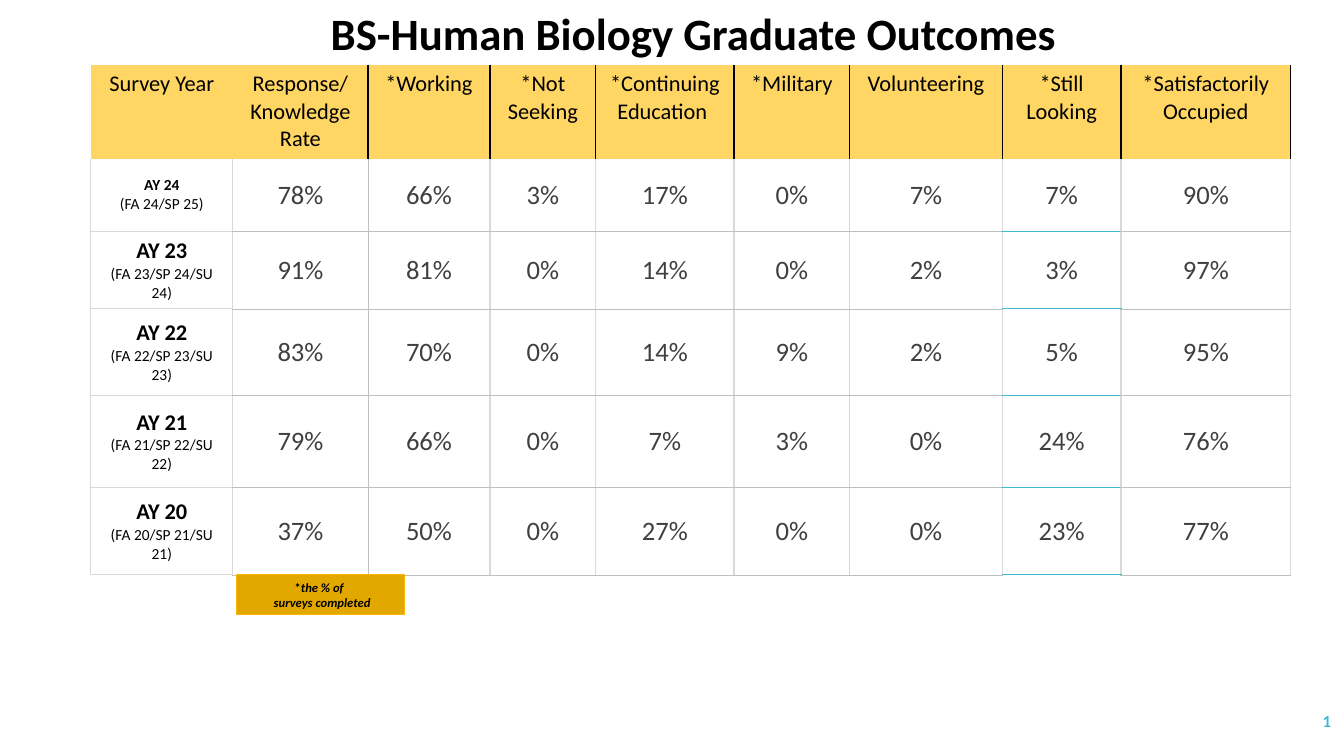
from collections import namedtuple

from lxml.etree import SubElement
from pptx import Presentation
from pptx.dml.color import RGBColor
from pptx.enum.shapes import MSO_SHAPE
from pptx.enum.text import MSO_ANCHOR, MSO_AUTO_SIZE, PP_ALIGN
from pptx.oxml.ns import qn
from pptx.util import Inches, Pt

BLACK = RGBColor(0x00, 0x00, 0x00)
WHITE = RGBColor(0xFF, 0xFF, 0xFF)
CHARCOAL = RGBColor(0x40, 0x40, 0x40)
GOLD = RGBColor(0xFF, 0xD6, 0x63)
DARK_GOLD = RGBColor(0xE3, 0xA8, 0x00)
GOLD_LINE = RGBColor(0xFA, 0xB9, 0x00)
TEAL = RGBColor(0x40, 0xBA, 0xD2)
PALE_GREY = RGBColor(0xD9, 0xD9, 0xD9)
MID_GREY = RGBColor(0xBF, 0xBF, 0xBF)

FONT = "Calibri"
NO_STYLE = "{2D5ABB26-0587-4C30-8999-92F81FD0307C}"
STILL_LOOKING = 7

Box = namedtuple("Box", "left top width height")

COLUMN_WIDTHS = [1.41, 1.34, 1.21, 1.05, 1.37, 1.15, 1.51, 1.18, 1.68]
ROW_HEIGHTS = [0.91, 0.72, 0.72, 0.86, 0.91, 0.87]
HEADINGS = [
    ["Survey Year"], ["Response/", "Knowledge", "Rate"], ["*Working"],
    ["*Not", "Seeking"], ["*Continuing Education "], ["*Military"],
    ["Volunteering"], ["*Still Looking"], ["*Satisfactorily", "Occupied"],
]
OUTCOMES = [
    ("AY 24", 11, "(FA 24/SP 25)", [78, 66, 3, 17, 0, 7, 7, 90]),
    ("AY 23", 16, "(FA 23/SP 24/SU 24)", [91, 81, 0, 14, 0, 2, 3, 97]),
    ("AY 22", 16, "(FA 22/SP 23/SU 23)", [83, 70, 0, 14, 9, 2, 5, 95]),
    ("AY 21", 16, "(FA 21/SP 22/SU 22)", [79, 66, 0, 7, 3, 0, 24, 76]),
    ("AY 20", 16, "(FA 20/SP 21/SU 21)", [37, 50, 0, 27, 0, 0, 23, 77]),
]


def place(box):
    """Return the box as four lengths."""
    return [Inches(value) for value in box]


def add_span(para, text, size, color=BLACK, bold=False, italic=False):
    """Append one formatted run to a paragraph."""
    span = para.add_run()
    span.text = text
    font = span.font
    font.name, font.size, font.bold, font.italic = FONT, Pt(size), bold, italic
    font.color.rgb = color
    return span


def write_lines(frame, lines, align=PP_ALIGN.CENTER):
    """Write one paragraph per line, each line a list of run arguments."""
    for index, spans in enumerate(lines):
        para = frame.add_paragraph() if index else frame.paragraphs[0]
        para.alignment = align
        for span in spans:
            add_span(para, *span)


def vertical_edge(row, edge):
    """Return colour and width of the border left of column number edge."""
    if row == 0:
        return (BLACK, 1) if edge >= 2 else None
    return (MID_GREY, 0.25) if edge == 2 else (PALE_GREY, 1)


def horizontal_edge(edge, column):
    """Return colour and width of the border above row number edge."""
    if edge < 2:
        return None
    special = {0: (PALE_GREY, 1), STILL_LOOKING: (TEAL, 1)}
    return special.get(column, (MID_GREY, 0.25))


def set_borders(cell, row, column):
    """Draw the four borders of a cell."""
    edges = {
        "a:lnL": vertical_edge(row, column),
        "a:lnR": vertical_edge(row, column + 1),
        "a:lnT": horizontal_edge(row, column),
        "a:lnB": horizontal_edge(row + 1, column),
    }
    properties = cell._tc.get_or_add_tcPr()
    for tag, edge in edges.items():
        line = SubElement(properties, qn(tag))
        if edge is None:
            SubElement(line, qn("a:noFill"))
            continue
        color, width = edge
        line.set("w", str(Pt(width)))
        fill = SubElement(line, qn("a:solidFill"))
        SubElement(fill, qn("a:srgbClr")).set("val", str(color))


def add_title(page, box):
    """Place the slide title."""
    title = page.shapes.title
    title.left, title.top, title.width, title.height = place(box)
    frame = title.text_frame
    frame.auto_size = MSO_AUTO_SIZE.NONE
    frame.vertical_anchor = MSO_ANCHOR.TOP
    heading = ("BS-Human Biology Graduate Outcomes", 32, BLACK, True)
    write_lines(frame, [[heading]], PP_ALIGN.LEFT)


def add_outcomes_table(page, box):
    """Build the table of survey outcomes by academic year."""
    rows = [[[[(line, 16)] for line in lines] for lines in HEADINGS]]
    for year, size, terms, rates in OUTCOMES:
        label = [[(year, size, BLACK, True)], [(terms, 11)]]
        rows.append([label] + [[[(f"{rate}%", 19, CHARCOAL)]] for rate in rates])

    frame = page.shapes.add_table(len(rows), len(HEADINGS), *place(box))
    table = frame.table
    table._tbl.tblPr.find(qn("a:tableStyleId")).text = NO_STYLE
    table.horz_banding = False
    for column, width in zip(table.columns, COLUMN_WIDTHS):
        column.width = Inches(width)
    for row, height in zip(table.rows, ROW_HEIGHTS):
        row.height = Inches(height)

    for row, contents in enumerate(rows):
        for column, lines in enumerate(contents):
            cell = table.cell(row, column)
            cell.margin_left = cell.margin_right = Inches(0.12)
            cell.margin_top = cell.margin_bottom = Inches(0.06)
            cell.vertical_anchor = MSO_ANCHOR.MIDDLE if row else MSO_ANCHOR.TOP
            set_borders(cell, row, column)
            cell.fill.solid()
            cell.fill.fore_color.rgb = WHITE if row else GOLD
            write_lines(cell.text_frame, lines)


def add_footnote(page, box):
    """Add the gold note that explains the asterisk."""
    note = page.shapes.add_shape(MSO_SHAPE.RECTANGLE, *place(box))
    note.shadow.inherit = False
    note.fill.solid()
    note.fill.fore_color.rgb = DARK_GOLD
    note.line.color.rgb = GOLD_LINE
    note.line.width = Pt(0.75)
    note.text_frame.word_wrap = True
    note.text_frame.vertical_anchor = MSO_ANCHOR.MIDDLE
    write_lines(note.text_frame, [
        [("*", 9, BLACK, True), ("the % of ", 9, BLACK, True, True)],
        [(" surveys completed", 9, BLACK, True, True)],
    ])


def add_page_number(page, box):
    """Add the slide number as a live field."""
    frame = page.shapes.add_textbox(*place(box)).text_frame
    frame.word_wrap = True
    frame.vertical_anchor = MSO_ANCHOR.MIDDLE
    para = frame.paragraphs[0]
    para.alignment = PP_ALIGN.RIGHT
    field = add_span(para, "1", 12, TEAL, True)._r
    field.tag = qn("a:fld")
    field.set("id", "{B6F15528-21DE-4FAA-801E-634DDDAF4B2B}")
    field.set("type", "slidenum")


def main():
    """Build and save the slide."""
    deck = Presentation()
    deck.slide_width, deck.slide_height = Inches(13.33), Inches(7.5)
    page = deck.slides.add_slide(deck.slide_layouts[5])
    add_title(page, Box(3.18, 0.01, 8.06, 0.64))
    add_outcomes_table(page, Box(0.9, 0.64, sum(COLUMN_WIDTHS), sum(ROW_HEIGHTS)))
    add_footnote(page, Box(2.35, 5.7, 1.66, 0.4))
    add_page_number(page, Box(11.63, 6.95, 1.67, 0.4))
    deck.save("out.pptx")


if __name__ == "__main__":
    main()
